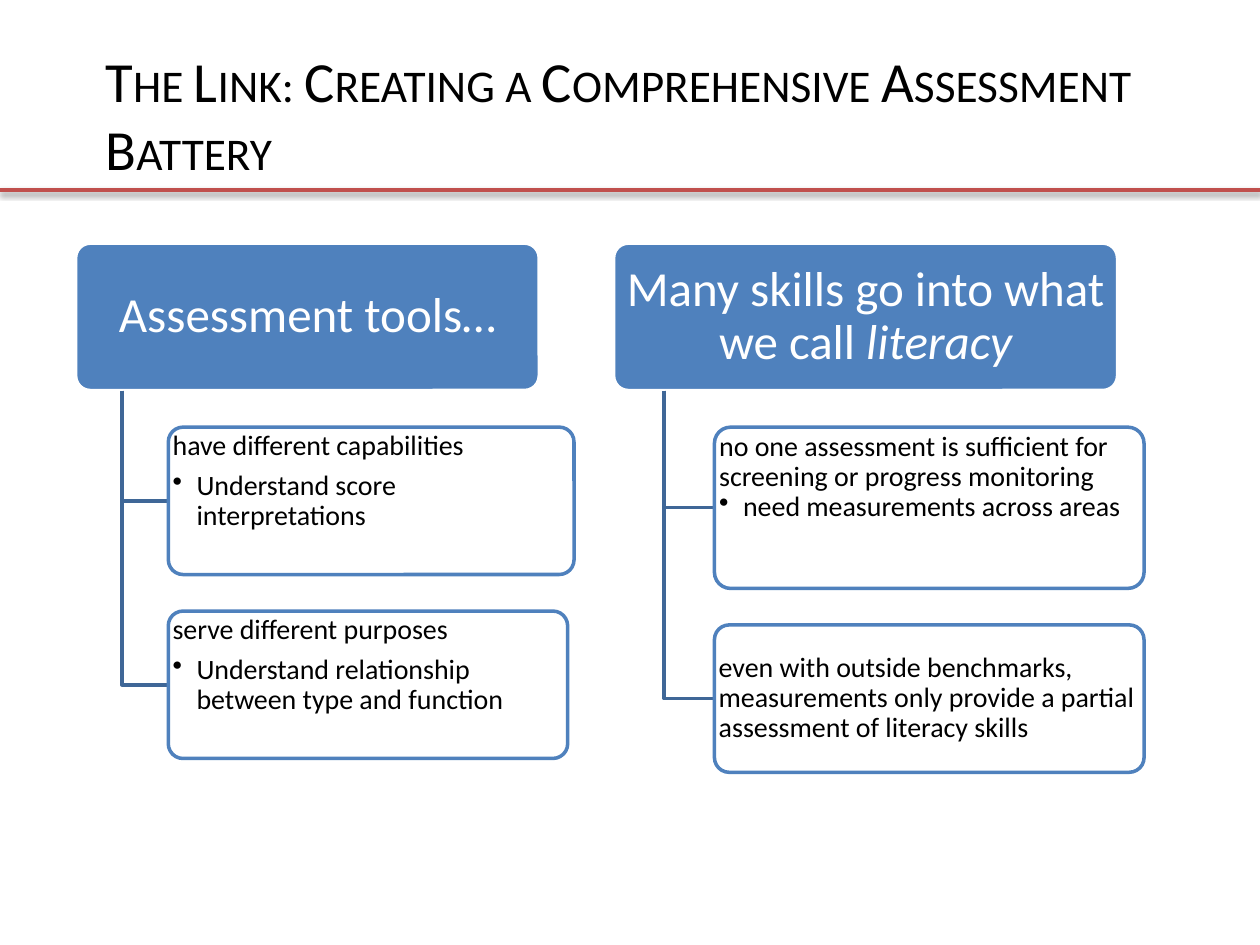
from dataclasses import dataclass

from lxml.etree import SubElement
from pptx import Presentation
from pptx.dml.color import RGBColor as RGB
from pptx.enum.shapes import MSO_CONNECTOR as CONN, MSO_SHAPE as SHAPE
from pptx.enum.text import MSO_ANCHOR as ANCHOR, PP_ALIGN as ALIGN
from pptx.oxml.ns import qn
from pptx.util import Inches, Pt


@dataclass(frozen=True)
class Theme:
    font: str = "Calibri"
    black: RGB = RGB(0x00, 0x00, 0x00)
    white: RGB = RGB(0xFF, 0xFF, 0xFF)
    blue: RGB = RGB(0x4F, 0x81, 0xBD)
    branch: RGB = RGB(0x3F, 0x67, 0x97)
    red: RGB = RGB(0xC0, 0x50, 0x4D)
    title: float = 32.4
    header: float = 28
    body: float = 16
    line: float = 2


T = Theme()
TOP, HEIGHT, GAP = 1.93, 1.17, 0.29

COLUMNS = [
    (0.6, 3.68, [("Assessment tools…", False)], [
        (3.22, HEIGHT, ANCHOR.TOP, 5.6,
         "have different capabilities", "Understand score interpretations"),
        (3.17, HEIGHT, ANCHOR.TOP, 5.6,
         "serve different purposes",
         "Understand relationship between type and function"),
    ]),
    (4.87, 4, [("Many skills go into what we call ", False), ("literacy", True)], [
        (3.41, 1.28, ANCHOR.TOP, 0,
         "no one assessment is sufficient for screening or progress monitoring",
         "need measurements across areas"),
        (3.41, HEIGHT, ANCHOR.MIDDLE, 0,
         "even with outside benchmarks, measurements only provide a partial "
         "assessment of literacy skills", None),
    ]),
]


def style_run(r, size, color, italic=False):
    r.font.name = T.font
    r.font.size = Pt(size)
    r.font.color.rgb = color
    if italic:
        r.font.italic = True


def set_frame(tf, anchor, dx, dy):
    tf.word_wrap = True
    tf.vertical_anchor = anchor
    tf.margin_left = tf.margin_right = Inches(dx)
    tf.margin_top = tf.margin_bottom = Inches(dy)


def set_line(shape, color):
    shape.line.color.rgb = color
    shape.line.width = Pt(T.line)


def add_title(s, text):
    tf = s.shapes.add_textbox(
        Inches(0.74), Inches(0.29), Inches(8.6), Inches(1.22)).text_frame
    set_frame(tf, ANCHOR.MIDDLE, 0.1, 0.05)
    tf.text = text
    r = tf.paragraphs[0].runs[0]
    style_run(r, T.title, T.black)
    r.font._element.set("cap", "small")


def add_rule(s, y):
    rule = s.shapes.add_connector(
        CONN.STRAIGHT, 0, Inches(y), Inches(10), Inches(y))
    set_line(rule, T.red)
    effects = SubElement(rule._element.spPr, qn("a:effectLst"))
    shadow = SubElement(effects, qn("a:outerShdw"), blurRad=str(Pt(3.1)),
                        dist=str(Pt(1.6)), dir="5400000", rotWithShape="0")
    color = SubElement(shadow, qn("a:srgbClr"), val=str(T.black))
    SubElement(color, qn("a:alpha"), val="38000")


def add_round_box(s, x, y, w, h, fill, line):
    sp = s.shapes.add_shape(
        SHAPE.ROUNDED_RECTANGLE, Inches(x), Inches(y), Inches(w), Inches(h))
    sp.adjustments[0] = 0.1
    sp.shadow.inherit = False
    sp.fill.solid()
    sp.fill.fore_color.rgb = fill
    set_line(sp, line)
    return sp


def add_header(s, x, w, parts):
    tf = add_round_box(s, x, TOP, w, HEIGHT, T.blue, T.white).text_frame
    set_frame(tf, ANCHOR.MIDDLE, 0.03, 0.01)
    p = tf.paragraphs[0]
    p.alignment = ALIGN.CENTER
    p.line_spacing = 0.9
    for text, italic in parts:
        r = p.add_run()
        r.text = text
        style_run(r, T.header, T.white, italic)


def add_branch(s, x, y, end_x, end_y):
    builder = s.shapes.build_freeform(Inches(x), Inches(y))
    builder.add_line_segments(
        [(Inches(x), Inches(end_y)), (Inches(end_x), Inches(end_y))], close=False)
    sp = builder.convert_to_shape()
    sp.shadow.inherit = False
    sp.fill.background()
    set_line(sp, T.branch)


def add_bullet(p):
    pPr = p._p.get_or_add_pPr()
    pPr.set("marL", str(Inches(0.19)))
    pPr.set("indent", str(Inches(-0.19)))
    SubElement(pPr, qn("a:buChar"), char="•")


def add_detail(s, x, y, w, h, anchor, space, text, bullet):
    sp = add_round_box(s, x, y, w, h, T.white, T.blue)
    color = sp._element.spPr.find(qn("a:solidFill"))[0]
    SubElement(color, qn("a:alpha"), val="90000")
    tf = sp.text_frame
    set_frame(tf, anchor, 0, 0)
    tf.text = text
    tf.paragraphs[0].space_after = Pt(space)
    if bullet:
        p = tf.add_paragraph()
        p.text = bullet
        add_bullet(p)
    for p in tf.paragraphs:
        p.alignment = ALIGN.LEFT
        p.line_spacing = 0.9
        style_run(p.runs[0], T.body, T.black)


def add_column(s, x, w, header, details):
    add_header(s, x, w, header)
    trunk_x, box_x = x + 0.1 * w, x + 0.2 * w
    bottom = TOP + HEIGHT
    y = bottom + GAP
    for box_w, box_h, *content in details:
        add_branch(s, trunk_x, bottom, box_x, y + box_h / 2)
        add_detail(s, box_x, y, box_w, box_h, *content)
        y += box_h + GAP


def main():
    prs = Presentation()
    prs.slide_width, prs.slide_height = Inches(10), Inches(7.5)
    s = prs.slides.add_slide(prs.slide_layouts[6])
    add_title(s, "The Link: Creating a Comprehensive Assessment Battery")
    for column in COLUMNS:
        add_column(s, *column)
    add_rule(s, 1.51)
    prs.save("out.pptx")


if __name__ == "__main__":
    main()
